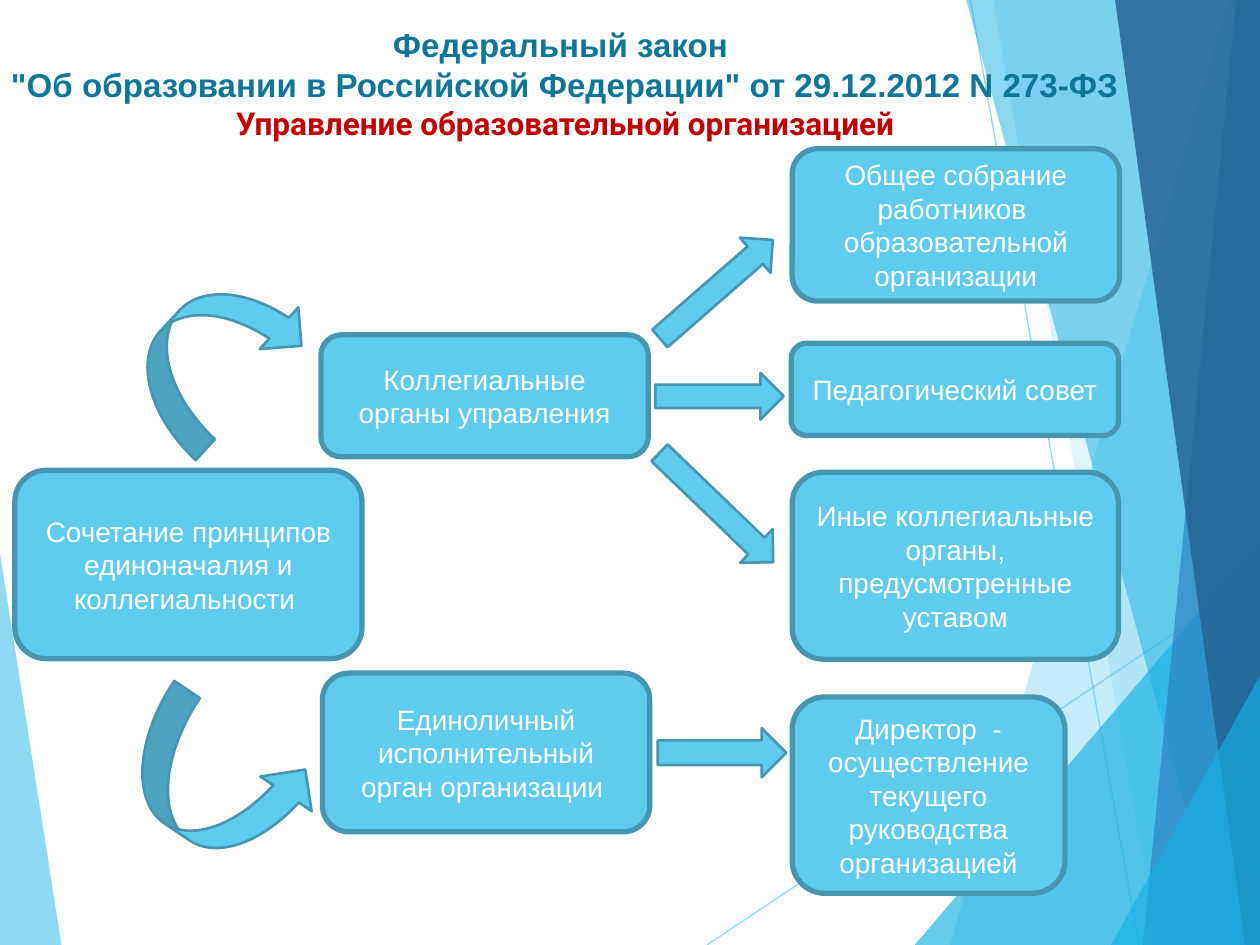
"""Builds the slide on the management of an educational organisation."""
from typing import NamedTuple

from lxml import etree
from pptx import Presentation
from pptx import util as u
from pptx.dml.color import RGBColor
from pptx.enum import shapes, text
from pptx.oxml.ns import qn

COLORS = {
    "sky": "5FCBEF", "azure": "17B0E4", "blue": "2E83C3", "navy": "226292",
    "edge": "4696B1", "teal": "0F7698", "red": "C00000", "white": "FFFFFF",
}
W, H = 25.4, 19.05
KIND = shapes.MSO_SHAPE


class Facet(NamedTuple):
    color: str
    alpha: int
    points: list[tuple[float, float]]


class Ray(NamedTuple):
    start: tuple[float, float]
    end: tuple[float, float]


class Box(NamedTuple):
    left: float
    top: float
    width: float
    height: float
    label: str


class Arrow(NamedTuple):
    kind: KIND
    left: float
    top: float
    width: float
    height: float
    rotation: float = 0
    flipped: bool = False


LEFT_FACET = Facet("sky", 70, [(0, 11.15), (1.24, H), (0, H)])
RAYS = [Ray((14.25, H), (W, 11.61)), Ray((19.56, 0), (22.96, H))]
RIGHT_FACETS = [
    Facet("sky", 36, [(24.77, 0), (19.15, H), (W, H), (W, 0)]),
    Facet("sky", 20, [(20.02, 0), (23.34, H), (W, H), (W, 0)]),
    Facet("azure", 66, [(18.44, H), (W, 10.9), (W, H)]),
    Facet("azure", 50, [(19.48, 0), (24.64, H), (W, H), (W, 0)]),
    Facet("blue", 70, [(24.92, 0), (23.04, H), (W, H), (W, 0)]),
    Facet("navy", 82, [(22.48, 0), (25.1, H), (W, H), (W, 0)]),
    Facet("azure", 66, [(22.4, H), (W, 13.62), (W, H)]),
]
TITLE = [
    ("Федеральный закон ", "Arial", 18.9, "teal"),
    ('"Об образовании в Российской Федерации" от 29.12.2012 N 273-ФЗ', "Arial", 18.9, "teal"),
    ("Управление образовательной организацией", "Roboto", 18, "red"),
]
BOXES = [
    Box(0.3, 9.48, 7, 3.8, "Сочетание принципов единоначалия и коллегиальности "),
    Box(6.47, 6.75, 6.6, 2.46, "Коллегиальные органы управления"),
    Box(6.5, 13.57, 6.6, 3.2, "Единоличный исполнительный орган организации "),
    Box(15.97, 3, 6.6, 3.07, "Общее собрание работников  образовательной организации"),
    Box(15.95, 6.92, 6.6, 1.86, "Педагогический совет"),
    Box(15.97, 14.05, 5.5, 3.96, "Директор  -\nосуществление текущего руководства организацией"),
    Box(15.97, 9.52, 6.58, 3.77, "Иные коллегиальные органы, предусмотренные уставом"),
]
ARROWS = [
    Arrow(KIND.CURVED_DOWN_ARROW, 2.51, 5.99, 3.71, 2.29, 312.8),
    Arrow(KIND.CURVED_DOWN_ARROW, 2.49, 14.58, 3.81, 2.49, 34.1, True),
    Arrow(KIND.UP_ARROW, 13.97, 4.32, 0.94, 3.02, 48.9),
    Arrow(KIND.UP_ARROW, 13.97, 8.64, 0.94, 3.18, 133.9),
    Arrow(KIND.RIGHT_ARROW, 13.21, 7.52, 2.59, 0.94),
    Arrow(KIND.RIGHT_ARROW, 13.26, 14.68, 2.59, 0.99),
]


def rgb(name: str) -> RGBColor:
    return RGBColor.from_string(COLORS[name])


def set_alpha(sp, percent: int) -> None:
    color = next(sp._element.spPr.iter(qn("a:srgbClr")))
    etree.SubElement(color, qn("a:alpha"), val=str(percent * 1000))


def add_facet(s, facet: Facet) -> None:
    points = [(u.Cm(x), u.Cm(y)) for x, y in facet.points]
    builder = s.shapes.build_freeform(*points[0])
    builder.add_line_segments(points[1:], close=True)
    sp = builder.convert_to_shape()
    sp.shadow.inherit = False
    sp.fill.solid()
    sp.fill.fore_color.rgb = rgb(facet.color)
    sp.line.fill.background()
    set_alpha(sp, facet.alpha)


def add_ray(s, ray: Ray) -> None:
    ends = [u.Cm(v) for v in ray.start + ray.end]
    sp = s.shapes.add_connector(shapes.MSO_CONNECTOR.STRAIGHT, *ends)
    sp.line.color.rgb = rgb("sky")
    sp.line.width = u.Pt(0.75)
    set_alpha(sp, 70)
    etree.SubElement(sp._element.spPr, qn("a:effectLst"))


def add_block(s, kind: KIND, item: Box | Arrow, line_width: float):
    frame = [u.Cm(v) for v in (item.left, item.top, item.width, item.height)]
    sp = s.shapes.add_shape(kind, *frame)
    sp.shadow.inherit = False
    sp.fill.solid()
    sp.fill.fore_color.rgb = rgb("sky")
    sp.line.color.rgb = rgb("edge")
    sp.line.width = u.Pt(line_width)
    return sp


def add_box(s, box: Box) -> None:
    tf = add_block(s, KIND.ROUNDED_RECTANGLE, box, 3).text_frame
    tf.text = box.label
    tf.word_wrap = True
    tf.vertical_anchor = text.MSO_ANCHOR.MIDDLE
    for p in tf.paragraphs:
        p.alignment = text.PP_ALIGN.CENTER
        p.font.name, p.font.size = "Arial", u.Pt(16)
        p.font.color.rgb = rgb("white")


def add_arrow(s, arrow: Arrow) -> None:
    sp = add_block(s, arrow.kind, arrow, 1.5)
    sp.rotation = arrow.rotation
    if arrow.flipped:
        sp._element.spPr.find(qn("a:xfrm")).set("flipV", "1")


def set_title(s) -> None:
    sp = s.shapes.title
    sp.left, sp.top, sp.width, sp.height = (u.Cm(v) for v in (-0.3, 0.3, 23.39, 2.74))
    s.shapes._spTree.append(sp._element)
    tf = sp.text_frame
    tf.word_wrap = True
    tf.auto_size = text.MSO_AUTO_SIZE.NONE
    tf.vertical_anchor = text.MSO_ANCHOR.MIDDLE
    p = tf.paragraphs[0]
    p.alignment = text.PP_ALIGN.CENTER
    for i, (line, font, size, color) in enumerate(TITLE):
        if i:
            p.add_line_break()
        r = p.add_run()
        r.text = line
        r.font.name, r.font.size, r.font.bold = font, u.Pt(size), True
        r.font.color.rgb = rgb(color)


def main() -> None:
    prs = Presentation()
    prs.slide_width, prs.slide_height = u.Cm(W), u.Cm(H)
    s = prs.slides.add_slide(prs.slide_layouts[5])
    add_facet(s, LEFT_FACET)
    for ray in RAYS:
        add_ray(s, ray)
    for facet in RIGHT_FACETS:
        add_facet(s, facet)
    set_title(s)
    for box in BOXES:
        add_box(s, box)
    for arrow in ARROWS:
        add_arrow(s, arrow)
    prs.save("out.pptx")


if __name__ == "__main__":
    main()
